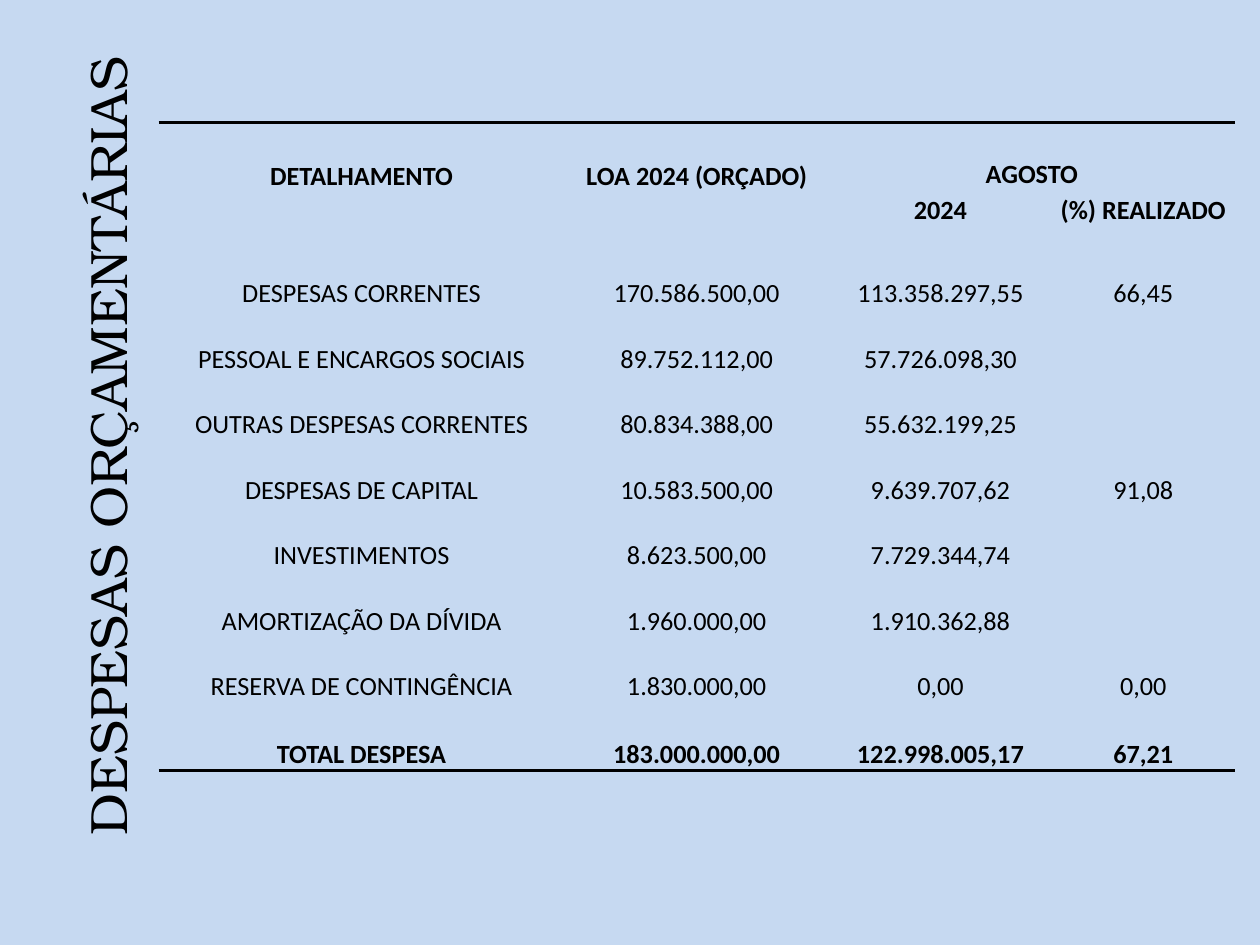
from dataclasses import dataclass

from lxml import etree
from pptx import Presentation
from pptx.dml.color import RGBColor
from pptx.enum.text import MSO_ANCHOR, MSO_AUTO_SIZE, PP_ALIGN
from pptx.oxml.ns import qn
from pptx.util import Inches, Pt

CENTER = PP_ALIGN.CENTER
MIDDLE, BOTTOM = MSO_ANCHOR.MIDDLE, MSO_ANCHOR.BOTTOM
FIT_SHAPE = MSO_AUTO_SIZE.SHAPE_TO_FIT_TEXT
NO_STYLE_NO_GRID = "{2D5ABB26-0587-4C30-8999-92F81FD0307C}"


@dataclass(frozen=True)
class Theme:
    background: RGBColor = RGBColor(0xC6, 0xD9, 0xF1)
    ink: RGBColor = RGBColor(0, 0, 0)
    title_font: str = "TeX Gyre Bonum"
    table_font: str = "Calibri"
    title_size: int = Pt(30)
    table_size: int = Pt(15)
    rule_width: int = Pt(2)


THEME = Theme()

TITLE = "DESPESAS ORÇAMENTÁRIAS"
COLUMN_WIDTHS = [3.22, 2.1, 1.77, 1.45]
ROW_HEIGHTS = [0.54, 0.32, 0.63] + [0.52] * 6 + [0.54]
HEADER_ROWS = 2
ROWS = [
    ["DETALHAMENTO", "LOA 2024 (ORÇADO)", "AGOSTO", ""],
    ["", "", "2024", "(%) REALIZADO"],
    ["DESPESAS CORRENTES", "170.586.500,00", "113.358.297,55", "66,45"],
    ["PESSOAL E ENCARGOS SOCIAIS", "89.752.112,00", "57.726.098,30", ""],
    ["OUTRAS DESPESAS CORRENTES", "80.834.388,00", "55.632.199,25", ""],
    ["DESPESAS DE CAPITAL", "10.583.500,00", "9.639.707,62", "91,08"],
    ["INVESTIMENTOS", "8.623.500,00", "7.729.344,74", ""],
    ["AMORTIZAÇÃO DA DÍVIDA", "1.960.000,00", "1.910.362,88", ""],
    ["RESERVA DE CONTINGÊNCIA", "1.830.000,00", "0,00", "0,00"],
    ["TOTAL DESPESA", "183.000.000,00", "122.998.005,17", "67,21"],
]
LAST_ROW = len(ROWS) - 1
# First and last cell of each merged area, as (row, column)
MERGES = [
    ((0, 0), (1, 0)),
    ((0, 1), (1, 1)),
    ((0, 2), (0, 3)),
    ((3, 3), (4, 3)),
    ((6, 3), (7, 3)),
]


def set_all(target, values):
    for name, value in values.items():
        setattr(target, name, value)


def write_text(frame, text, font, size, bold=False):
    para = frame.paragraphs[0]
    para.alignment = CENTER
    span = para.add_run()
    span.text = text
    set_all(span.font, {"name": font, "size": size, "bold": bold})
    span.font.color.rgb = THEME.ink


def add_rule(cell, side):
    """Draw a cell border; side is lnT or lnB."""
    properties = cell._tc.get_or_add_tcPr()
    line = etree.Element(qn(f"a:{side}"), w=str(THEME.rule_width))
    fill = etree.SubElement(line, qn("a:solidFill"))
    etree.SubElement(fill, qn("a:srgbClr"), val=str(THEME.ink))
    properties.insert(0, line)


def add_vertical_title(page, box):
    frame = page.shapes.add_textbox(*map(Inches, box)).text_frame
    set_all(frame, {"word_wrap": False, "auto_size": FIT_SHAPE})
    frame._txBody.bodyPr.set("vert", "vert270")
    write_text(frame, TITLE, THEME.title_font, THEME.title_size)


def fill_cell(cell, text, row):
    is_header = row < HEADER_ROWS
    set_all(cell, {
        "margin_left": Inches(0.01),
        "margin_right": Inches(0.01),
        "margin_top": Inches(0.01),
        "margin_bottom": 0,
        "vertical_anchor": MIDDLE if is_header and text != "AGOSTO" else BOTTOM,
    })
    cell.fill.solid()
    cell.fill.fore_color.rgb = THEME.background
    if text:
        bold = is_header or row == LAST_ROW
        write_text(cell.text_frame, text, THEME.table_font, THEME.table_size, bold)
    if row == 0:
        add_rule(cell, "lnT")
    elif row == LAST_ROW:
        add_rule(cell, "lnB")


def add_expense_table(page, box):
    table = page.shapes.add_table(
        len(ROWS), len(COLUMN_WIDTHS), *map(Inches, box)
    ).table
    set_all(table, {"first_row": False, "horz_banding": False})
    table._tbl.tblPr.find(qn("a:tableStyleId")).text = NO_STYLE_NO_GRID
    for column, width in zip(table.columns, COLUMN_WIDTHS):
        column.width = Inches(width)
    for row, height in zip(table.rows, ROW_HEIGHTS):
        row.height = Inches(height)
    for first, last in MERGES:
        table.cell(*first).merge(table.cell(*last))
    for row, texts in enumerate(ROWS):
        for column, text in enumerate(texts):
            fill_cell(table.cell(row, column), text, row)


def main():
    deck = Presentation()
    set_all(deck, {"slide_width": Inches(10), "slide_height": Inches(7.5)})
    page = deck.slides.add_slide(deck.slide_layouts[6])
    page.background.fill.solid()
    page.background.fill.fore_color.rgb = THEME.background
    add_vertical_title(page, (0.55, 0.63, 0.71, 5.82))
    add_expense_table(page, (1.26, 0.97, sum(COLUMN_WIDTHS), sum(ROW_HEIGHTS)))
    deck.save("out.pptx")


if __name__ == "__main__":
    main()
